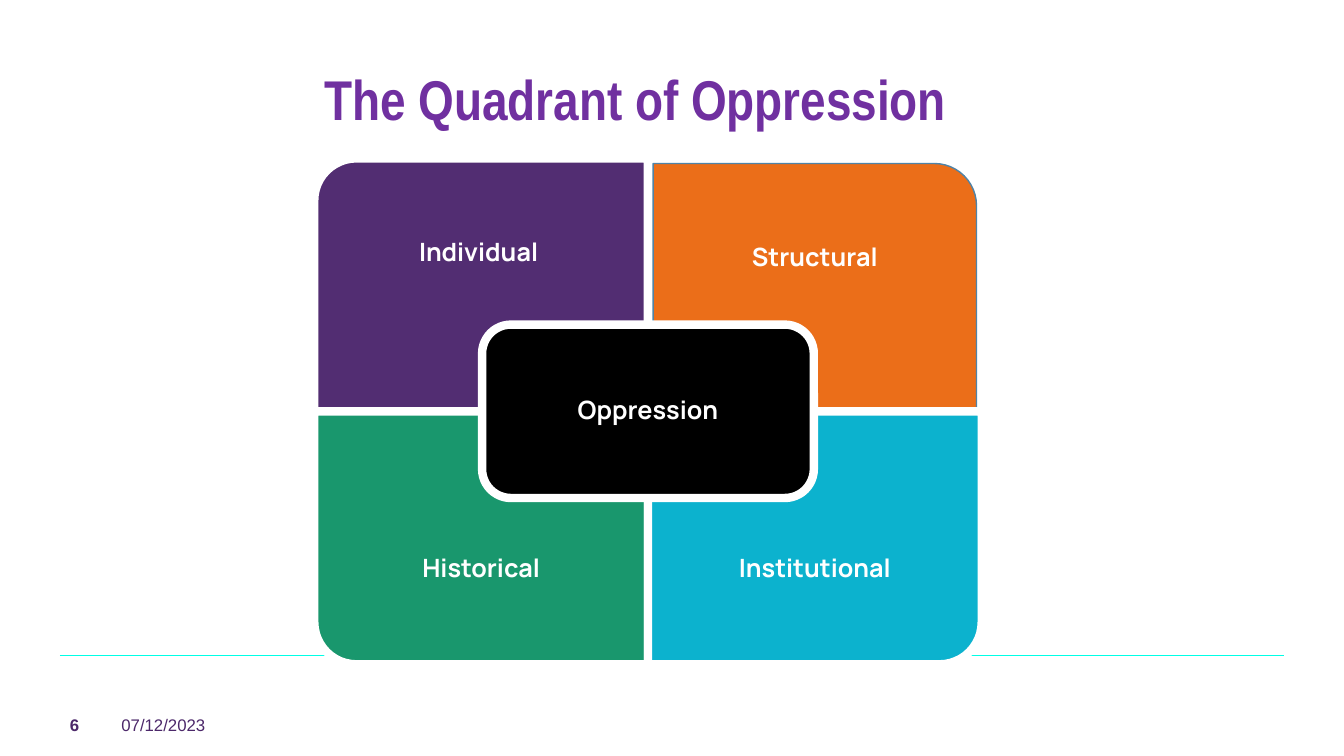
from lxml import etree
from pptx import Presentation
from pptx.dml.color import RGBColor
from pptx.enum import shapes, text
from pptx.oxml.ns import qn
from pptx.util import Cm, Pt

WHITE = RGBColor(0xFF, 0xFF, 0xFF)
BLACK = RGBColor(0x00, 0x00, 0x00)
TITLE_PURPLE = RGBColor(0x70, 0x30, 0xA0)
FOOTER_PURPLE = RGBColor(0x4C, 0x28, 0x6A)
RULE_CYAN = RGBColor(0x00, 0xFF, 0xE6)
PURPLE = RGBColor(0x52, 0x2D, 0x72)
ORANGE = RGBColor(0xEB, 0x6E, 0x19)
ORANGE_EDGE = RGBColor(0x4F, 0x83, 0xA7)
GREEN = RGBColor(0x19, 0x97, 0x6D)
BLUE = RGBColor(0x0C, 0xB2, 0xCE)

QUADRANTS = [
    ("Individual ", PURPLE, 0, 0, 270),
    ("Structural", ORANGE, 1, 0, 0),
    ("Historical", GREEN, 0, 1, 180),
    ("Institutional", BLUE, 1, 1, 90),
]


def style_text(frame, words, name, size, color, bold):
    frame.text = words
    font = frame.paragraphs[0].runs[0].font
    font.name, font.size, font.bold = name, Pt(size), bold
    font.color.rgb = color


def add_title(page, left, top, width, height):
    title = page.shapes.title
    title.left, title.top, title.width, title.height = left, top, width, height
    frame = title.text_frame
    frame.word_wrap = True
    frame.vertical_anchor = text.MSO_ANCHOR.MIDDLE
    style_text(frame, "The Quadrant of Oppression", "Arial Narrow", 40, TITLE_PURPLE, True)
    frame.paragraphs[0].alignment = text.PP_ALIGN.LEFT


def add_footer(page, left, top, width):
    rule = page.shapes.add_connector(
        shapes.MSO_CONNECTOR.STRAIGHT, left, top, left + width, top)
    rule.line.color.rgb = RULE_CYAN
    rule.line.width = Pt(1)
    etree.SubElement(rule._element.spPr, qn("a:effectLst"))

    number_width = Cm(1.3)
    entries = [("07/12/2023", left + number_width, Cm(2.84), False),
               ("6", left, number_width, True)]
    for words, entry_left, entry_width, bold in entries:
        box = page.shapes.add_textbox(entry_left, top + Cm(1.37), entry_width, Cm(1.02))
        box.text_frame.word_wrap = True
        style_text(box.text_frame, words, "Arial", 12, FOOTER_PURPLE, bold)


def add_tile(page, kind, left, top, width, height, fill, edge=WHITE, weight=6):
    tile = page.shapes.add_shape(kind, left, top, width, height)
    tile.shadow.inherit = False
    tile.fill.solid()
    tile.fill.fore_color.rgb = fill
    tile.line.color.rgb = edge
    tile.line.width = Pt(weight)
    return tile


def add_label(page, words, left, top, width, height, inset):
    box = page.shapes.add_textbox(left, top, width, height)
    frame = box.text_frame
    frame.word_wrap = True
    frame.vertical_anchor = text.MSO_ANCHOR.MIDDLE
    frame.margin_left = frame.margin_right = inset
    frame.margin_top = frame.margin_bottom = inset
    style_text(frame, words, "Manrope", 18, WHITE, True)
    frame.paragraphs[0].alignment = text.PP_ALIGN.CENTER
    frame.paragraphs[0].line_spacing = 0.9


def add_quadrant(page, words, fill, rotation, left, top, width, height, at_bottom):
    kind = shapes.MSO_SHAPE.ROUND_1_RECTANGLE
    label_height = int(height * 0.75)
    label_top = top + height - label_height if at_bottom else top
    if rotation in (90, 270):
        shift = (width - height) // 2
        tile = add_tile(page, kind, left + shift, top - shift, height, width, fill)
    elif rotation == 180:
        tile = add_tile(page, kind, left, top, width, height, fill)
    else:
        gap = Cm(0.13)
        left, width = left + gap, width - 2 * gap
        label_top = top + gap
        tile = add_tile(page, kind, left, label_top, width, height, fill, ORANGE_EDGE, 1)
    tile.rotation = rotation
    add_label(page, words, left, label_top, width, label_height, Cm(0.36))


def add_matrix(page, left, top, width, height):
    tile_width, tile_height = width // 2, height // 2
    for words, fill, column, row, rotation in QUADRANTS:
        add_quadrant(page, words, fill, rotation,
                     left + column * tile_width, top + row * tile_height,
                     tile_width, tile_height, row == 1)

    core_width, core_height = Cm(8.36), Cm(4.37)
    core_left = left + (width - core_width) // 2
    core_top = top + (height - core_height) // 2
    add_tile(page, shapes.MSO_SHAPE.ROUNDED_RECTANGLE,
             core_left, core_top, core_width, core_height, BLACK)
    pad = Cm(0.21)
    add_label(page, "Oppression", core_left + pad, core_top + pad,
              core_width - 2 * pad, core_height - 2 * pad, Cm(0.18))


def main():
    deck = Presentation()
    deck.slide_width, deck.slide_height = Cm(33.87), Cm(19.05)
    page = deck.slides.add_slide(deck.slide_layouts[5])
    add_title(page, Cm(7.92), Cm(1.32), Cm(29.21), Cm(2.31))
    add_footer(page, Cm(1.51), Cm(16.51), Cm(30.86))
    add_matrix(page, Cm(7.92), Cm(3.99), Cm(16.82), Cm(12.75))
    deck.save("out.pptx")


if __name__ == "__main__":
    main()
